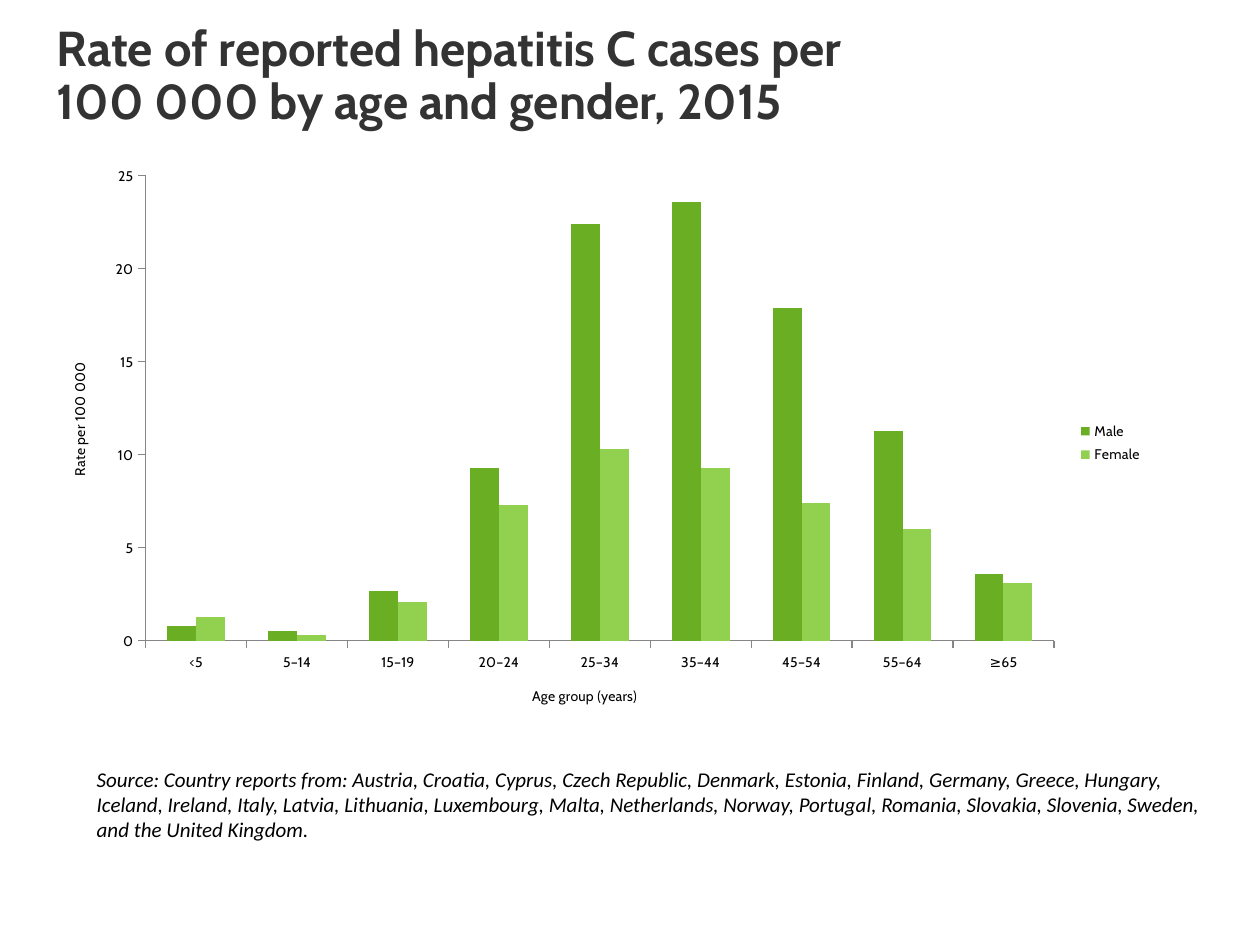
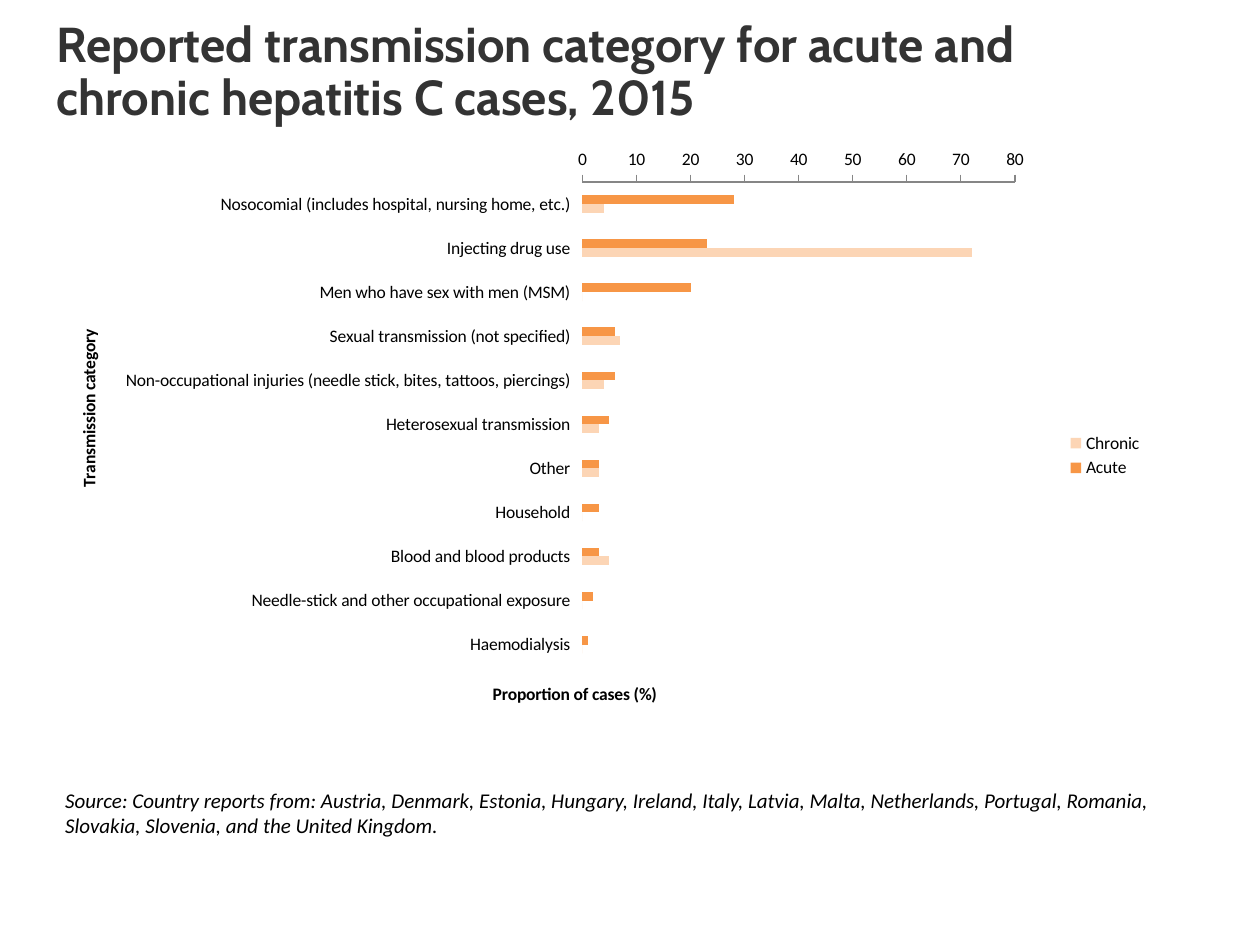
from dataclasses import dataclass

import pptx
import pptx.chart.data
import pptx.dml.color
import pptx.enum.chart
import pptx.enum.text
import pptx.oxml
import pptx.oxml.ns
import pptx.util
from pptx.util import Pt


@dataclass(frozen=True)
class Theme:
    ink: str = "333333"
    text: str = "000000"
    axis: str = "868686"
    heading_font: str = "Cabin"
    body_font: str = "Calibri"
    title_size: int = 28
    source_size: int = 12


THEME = Theme()
CHART_TYPE = pptx.enum.chart.XL_CHART_TYPE

# Boxes are left, top, width, height in points.
SLIDES = [
    {
        "title": ["Rate of reported hepatitis C cases per", "100 000 by age and gender, 2015"],
        "title_box": (25.2, 11.5, 648, 64.8),
        "source": "Source: Country reports from: Austria, Croatia, Cyprus, Czech Republic, "
                  "Denmark, Estonia, Finland, Germany, Greece, Hungary, Iceland, Ireland, Italy, "
                  "Latvia, Lithuania, Luxembourg, Malta, Netherlands, Norway, Portugal, Romania, "
                  "Slovakia, Slovenia, Sweden, and the United Kingdom.",
        "source_box": (48.2, 434.2, 663.1, 51.1),
        "chart": {
            "type": CHART_TYPE.COLUMN_CLUSTERED,
            "box": (25.2, 88.6, 635, 329),
            "font": THEME.heading_font, "size": 8, "bold_titles": False,
            "category_title": "Age group (years)",
            "value_title": "Rate per 100 000",
            "maximum": 25, "step": 5, "gap": 150,
            "categories": ["<5", "5–14", "15–19", "20–24", "25–34", "35–44", "45–54",
                           "55–64", "≥65"],
            "series": [
                ("Male", "69AE23", [0.8, 0.5, 2.7, 9.3, 22.4, 23.6, 17.9, 11.3, 3.6]),
                ("Female", "92D050", [1.3, 0.3, 2.1, 7.3, 10.3, 9.3, 7.4, 6, 3.1]),
            ],
        },
    },
    {
        "title": ["Reported transmission category for acute and chronic hepatitis C cases, 2015"],
        "title_box": (25.2, 9.4, 648, 64.8),
        "source": "Source: Country reports from: Austria, Denmark, Estonia, Hungary, Ireland, "
                  "Italy, Latvia, Malta, Netherlands, Portugal, Romania, Slovakia, Slovenia, "
                  "and the United Kingdom.",
        "source_box": (30.2, 446.4, 664.6, 36),
        "chart": {
            "type": CHART_TYPE.BAR_CLUSTERED,
            "box": (42.5, 82.8, 617.8, 355),
            "font": THEME.body_font, "size": 10, "bold_titles": True,
            "category_title": "Transmission category",
            "value_title": "Proportion of cases (%)",
            "maximum": 80, "step": 10, "gap": 300,
            "plot": {"x": 0.47, "y": 0.06, "w": 0.4, "h": 0.78},
            "categories": [
                "Nosocomial (includes hospital, nursing home, etc.)",
                "Injecting drug use",
                "Men who have sex with men (MSM)",
                "Sexual transmission (not specified)",
                "Non-occupational injuries (needle stick, bites, tattoos, piercings)",
                "Heterosexual transmission",
                "Other",
                "Household",
                "Blood and blood products",
                "Needle-stick and other occupational exposure",
                "Haemodialysis",
            ],
            "series": [
                ("Acute", "F79646", [28, 23, 20, 6, 6, 5, 3, 3, 3, 2, 1]),
                ("Chronic", "FCD5B5", [4, 72, 0, 7, 4, 3, 3, 0, 5, 0, 0]),
            ],
        },
    },
]


def rgb(code):
    return pptx.dml.color.RGBColor.from_string(code)


def points(box):
    return [Pt(length) for length in box]


def style_font(font, name, size, color, bold=False, italic=False):
    font.name, font.size, font.bold, font.italic = name, Pt(size), bold, italic
    font.color.rgb = rgb(color)


def add_title(page, lines, box):
    title = page.shapes.title
    title.left, title.top, title.width, title.height = points(box)
    frame = title.text_frame
    frame.word_wrap = True
    frame.auto_size = pptx.enum.text.MSO_AUTO_SIZE.NONE
    frame.vertical_anchor = pptx.enum.text.MSO_ANCHOR.MIDDLE
    para = frame.paragraphs[0]
    para.alignment = pptx.enum.text.PP_ALIGN.LEFT
    para.line_spacing = 0.9
    for number, line in enumerate(lines):
        if number:
            para.add_line_break()
        span = para.add_run()
        span.text = line
        style_font(span.font, THEME.heading_font, THEME.title_size, THEME.ink, bold=True)


def add_source(page, text, box):
    frame = page.shapes.add_textbox(*points(box)).text_frame
    frame.word_wrap = True
    span = frame.paragraphs[0].add_run()
    span.text = text
    style_font(span.font, THEME.body_font, THEME.source_size, THEME.text, italic=True)


def set_plot_area(chart, plot):
    """Fix the inner plot area as fractions of the chart."""
    area = chart._chartSpace.chart.plotArea
    for old in area.findall(pptx.oxml.ns.qn("c:layout")):
        area.remove(old)
    settings = {"layoutTarget": "inner", "xMode": "edge", "yMode": "edge", **plot}
    parts = "".join(f'<c:{tag} val="{value}"/>' for tag, value in settings.items())
    area.insert(0, pptx.oxml.parse_xml(
        f'<c:layout {pptx.oxml.ns.nsdecls("c")}>'
        f"<c:manualLayout>{parts}</c:manualLayout></c:layout>"))


def style_axis(axis, title, design):
    axis.has_major_gridlines = False
    axis.major_tick_mark = pptx.enum.chart.XL_TICK_MARK.OUTSIDE
    axis.minor_tick_mark = pptx.enum.chart.XL_TICK_MARK.NONE
    axis.format.line.color.rgb = rgb(THEME.axis)
    axis.format.line.width = Pt(0.75)
    span = axis.axis_title.text_frame.paragraphs[0].add_run()
    span.text = title
    style_font(span.font, design["font"], design["size"], THEME.text, bold=design["bold_titles"])


def add_rate_chart(page, design):
    data = pptx.chart.data.CategoryChartData()
    data.categories = design["categories"]
    for name, _, values in design["series"]:
        data.add_series(name, values)
    chart = page.shapes.add_chart(design["type"], *points(design["box"]), data).chart
    chart.has_title = False
    style_font(chart.font, design["font"], design["size"], THEME.text)

    chart.has_legend = True
    chart.legend.position = pptx.enum.chart.XL_LEGEND_POSITION.RIGHT
    chart.legend.include_in_layout = False

    bars = chart.plots[0]
    bars.vary_by_categories = False
    bars.gap_width, bars.overlap = design["gap"], 0
    for series, (_, color, _) in zip(bars.series, design["series"]):
        series.format.fill.solid()
        series.format.fill.fore_color.rgb = rgb(color)
        series.invert_if_negative = False

    style_axis(chart.category_axis, design["category_title"], design)
    style_axis(chart.value_axis, design["value_title"], design)
    chart.value_axis.minimum_scale = 0
    chart.value_axis.maximum_scale = design["maximum"]
    chart.value_axis.major_unit = design["step"]
    chart.value_axis.tick_labels.number_format = "0"
    chart.value_axis.tick_labels.number_format_is_linked = False

    if design["type"] == CHART_TYPE.BAR_CLUSTERED:
        # The first category goes on top, the value axis stays at the bottom.
        chart.category_axis.reverse_order = True
        chart.category_axis.crosses = pptx.enum.chart.XL_AXIS_CROSSES.MAXIMUM
        chart.category_axis.format.line.fill.background()
    if "plot" in design:
        set_plot_area(chart, design["plot"])


def main():
    deck = pptx.Presentation()
    deck.slide_width, deck.slide_height = Pt(720), Pt(540)
    title_only = deck.slide_layouts[5]
    for content in SLIDES:
        page = deck.slides.add_slide(title_only)
        add_title(page, content["title"], content["title_box"])
        add_source(page, content["source"], content["source_box"])
        add_rate_chart(page, content["chart"])
    deck.save("out.pptx")


if __name__ == "__main__":
    main()
